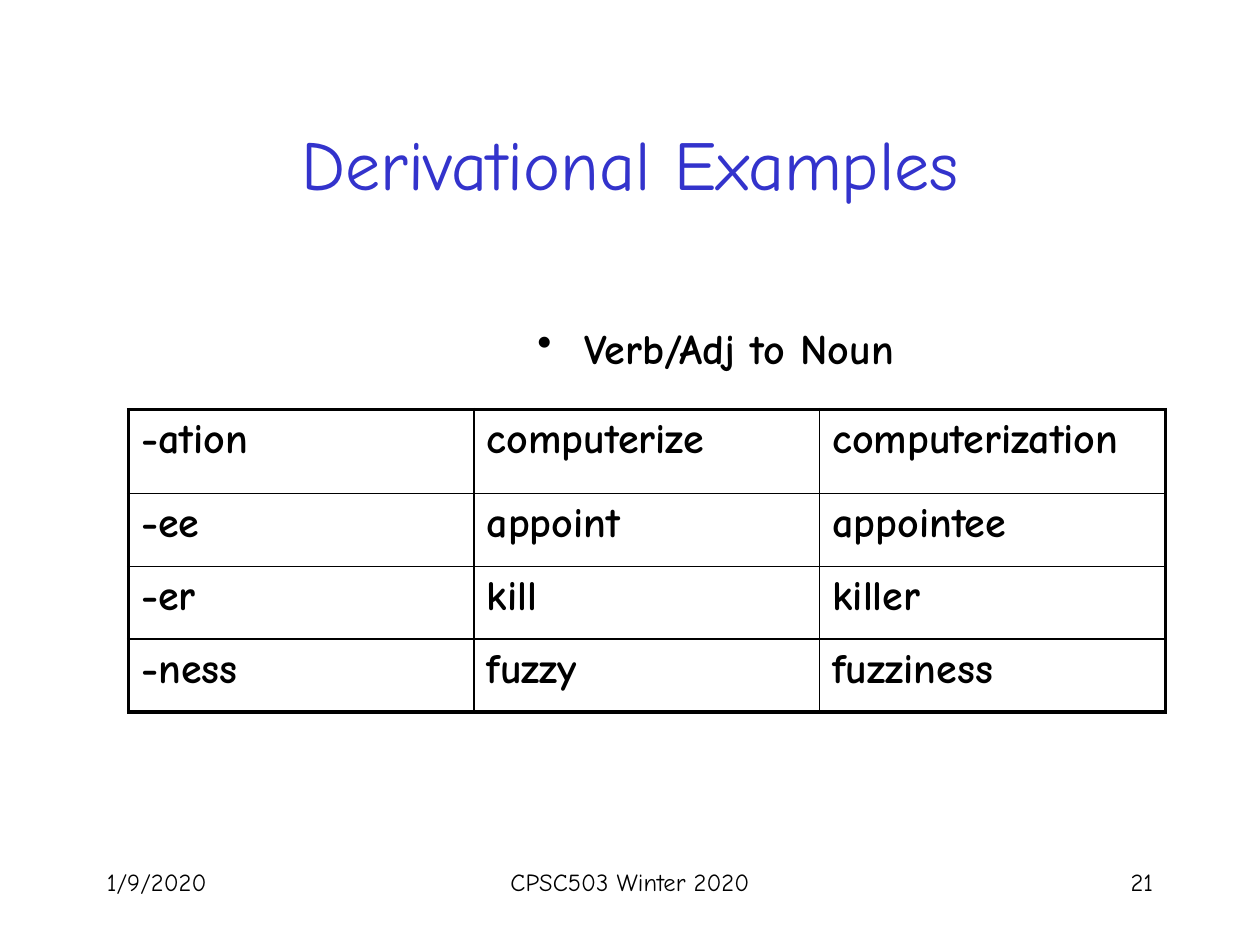
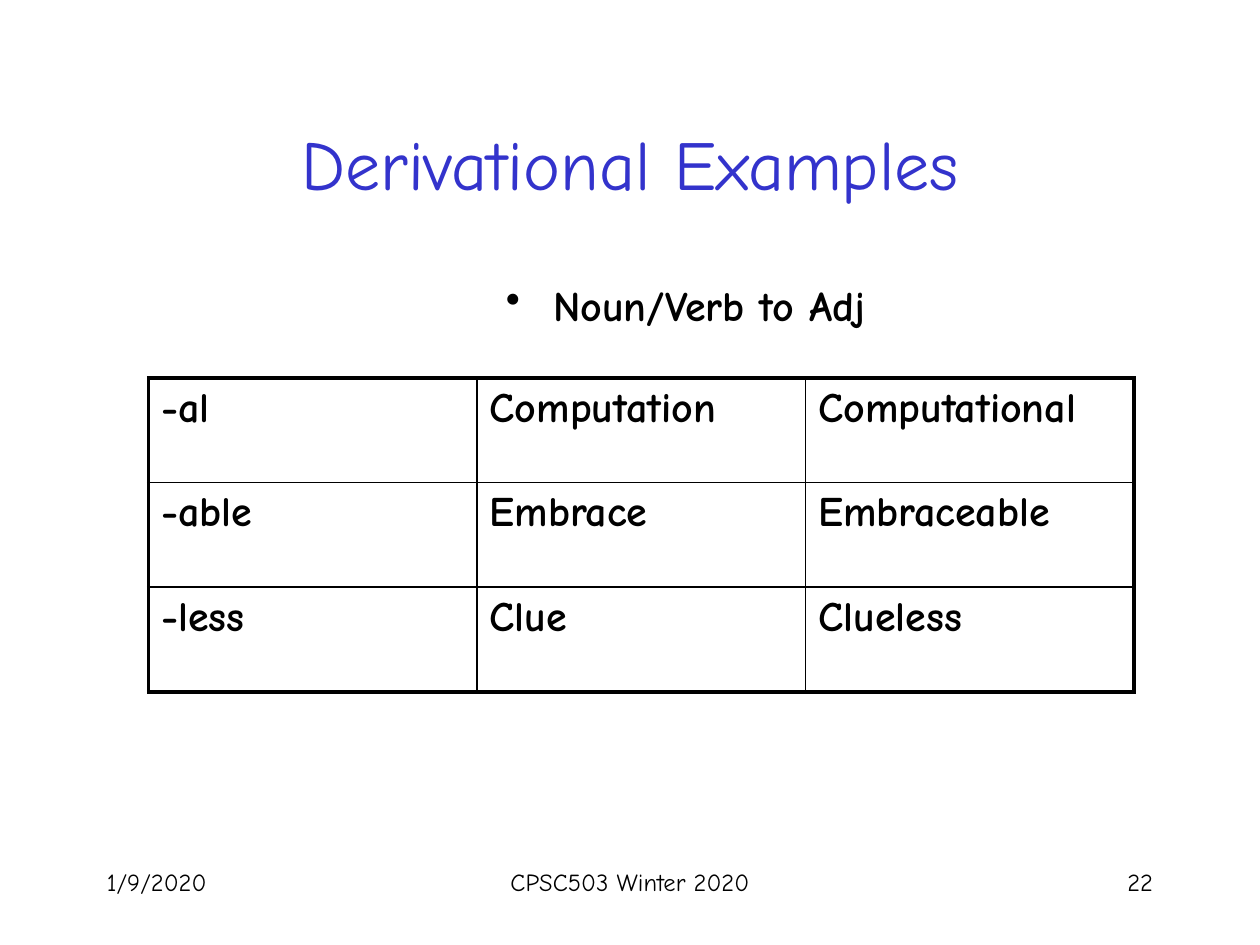
from lxml.etree import SubElement
from pptx import Presentation
from pptx.dml.color import RGBColor
from pptx.enum.text import MSO_ANCHOR, PP_ALIGN
from pptx.oxml.ns import qn
from pptx.util import Pt

BLACK = RGBColor(0x00, 0x00, 0x00)
BLUE = RGBColor(0x33, 0x33, 0xCC)
FONT = "Comic Neue"
TITLE = {"name": FONT, "size": Pt(40), "bold": False}
BODY = {"name": FONT, "size": Pt(24), "bold": True}
FOOTER = {"name": FONT, "size": Pt(14), "bold": False}
THICK, THIN = Pt(2.25), Pt(1)

FOOTER_TOP, FOOTER_HEIGHT = 492, 36
DATE = "1/9/2020"
COURSE = "CPSC503 Winter 2020"

SLIDES = [
    {
        "number": 21,
        "heading": "Verb/Adj to Noun",
        "heading_at": (300, 180.72),
        "table_at": (73.44, 234),
        "col_width": 197.5,
        "row_heights": [48, 41.6, 41.6, 41.6],
        "rows": [
            ("-ation", "computerize", "computerization"),
            ("-ee", "appoint", "appointee"),
            ("-er", "kill", "killer"),
            ("-ness", "fuzzy", "fuzziness"),
        ],
    },
    {
        "number": 22,
        "heading": "Noun/Verb to Adj",
        "heading_at": (282, 156.24),
        "table_at": (84.96, 216),
        "col_width": 187.7,
        "row_heights": [59.8] * 3,
        "rows": [
            ("-al", "Computation", "Computational"),
            ("-able", "Embrace", "Embraceable"),
            ("-less", "Clue", "Clueless"),
        ],
    },
]


def write(tf, text, style, color=BLACK, align=PP_ALIGN.LEFT):
    p = tf.paragraphs[0]
    p.alignment = align
    r = p.add_run()
    r.text = text
    for name, value in style.items():
        setattr(r.font, name, value)
    r.font.color.rgb = color
    return p


def add_text(s, box, text, style, color=BLACK, align=PP_ALIGN.LEFT,
             anchor=MSO_ANCHOR.TOP):
    tf = s.shapes.add_textbox(*map(Pt, box)).text_frame
    tf.word_wrap = True
    tf.vertical_anchor = anchor
    return write(tf, text, style, color, align)


def space_before(p, percent):
    pPr = p._p.get_or_add_pPr()
    spacing = SubElement(pPr, qn("a:spcBef"))
    SubElement(spacing, qn("a:spcPct"), val=str(percent * 1000))
    return pPr


def add_bullet(s, left, top, text):
    p = add_text(s, (left, top, 300, 324), text, BODY)
    pPr = space_before(p, 20)
    pPr.set("marL", str(Pt(27)))
    pPr.set("indent", str(-Pt(27)))
    SubElement(pPr, qn("a:buChar"), char="•")


def set_borders(cell, widths):
    tcPr = cell._tc.get_or_add_tcPr()
    for side, width in widths.items():
        ln = SubElement(tcPr, qn(f"a:ln{side}"), w=str(width))
        fill = SubElement(ln, qn("a:solidFill"))
        SubElement(fill, qn("a:srgbClr"), val=str(BLACK))


def add_grid(s, left, top, col_width, row_heights, rows):
    n_rows, n_cols = len(rows), len(rows[0])
    size = (col_width * n_cols, sum(row_heights))
    table = s.shapes.add_table(n_rows, n_cols, *map(Pt, (left, top, *size))).table
    table.first_row = table.horz_banding = False
    for col in table.columns:
        col.width = Pt(col_width)
    for i, (words, height) in enumerate(zip(rows, row_heights)):
        table.rows[i].height = Pt(height)
        for j, word in enumerate(words):
            cell = table.cell(i, j)
            space_before(write(cell.text_frame, word, BODY), 20)
            outer = {"L": j == 0, "R": j == n_cols - 1,
                     "T": i == 0, "B": i == n_rows - 1}
            set_borders(cell, {k: THICK if v else THIN for k, v in outer.items()})
            cell.fill.background()


def add_footer(s, number):
    for left, width, text, align in (
        (54, 150, DATE, PP_ALIGN.LEFT),
        (246, 228, COURSE, PP_ALIGN.CENTER),
        (516, 150, str(number), PP_ALIGN.RIGHT),
    ):
        box = (left, FOOTER_TOP, width, FOOTER_HEIGHT)
        add_text(s, box, text, FOOTER, align=align)


def main():
    prs = Presentation()
    prs.slide_width, prs.slide_height = Pt(720), Pt(540)
    for content in SLIDES:
        s = prs.slides.add_slide(prs.slide_layouts[6])
        add_footer(s, content["number"])
        add_text(s, (54, 48, 612, 90), "Derivational Examples", TITLE, BLUE,
                 PP_ALIGN.CENTER, MSO_ANCHOR.MIDDLE)
        add_bullet(s, *content["heading_at"], content["heading"])
        add_grid(s, *content["table_at"], content["col_width"],
                 content["row_heights"], content["rows"])
    prs.save("out.pptx")


if __name__ == "__main__":
    main()
